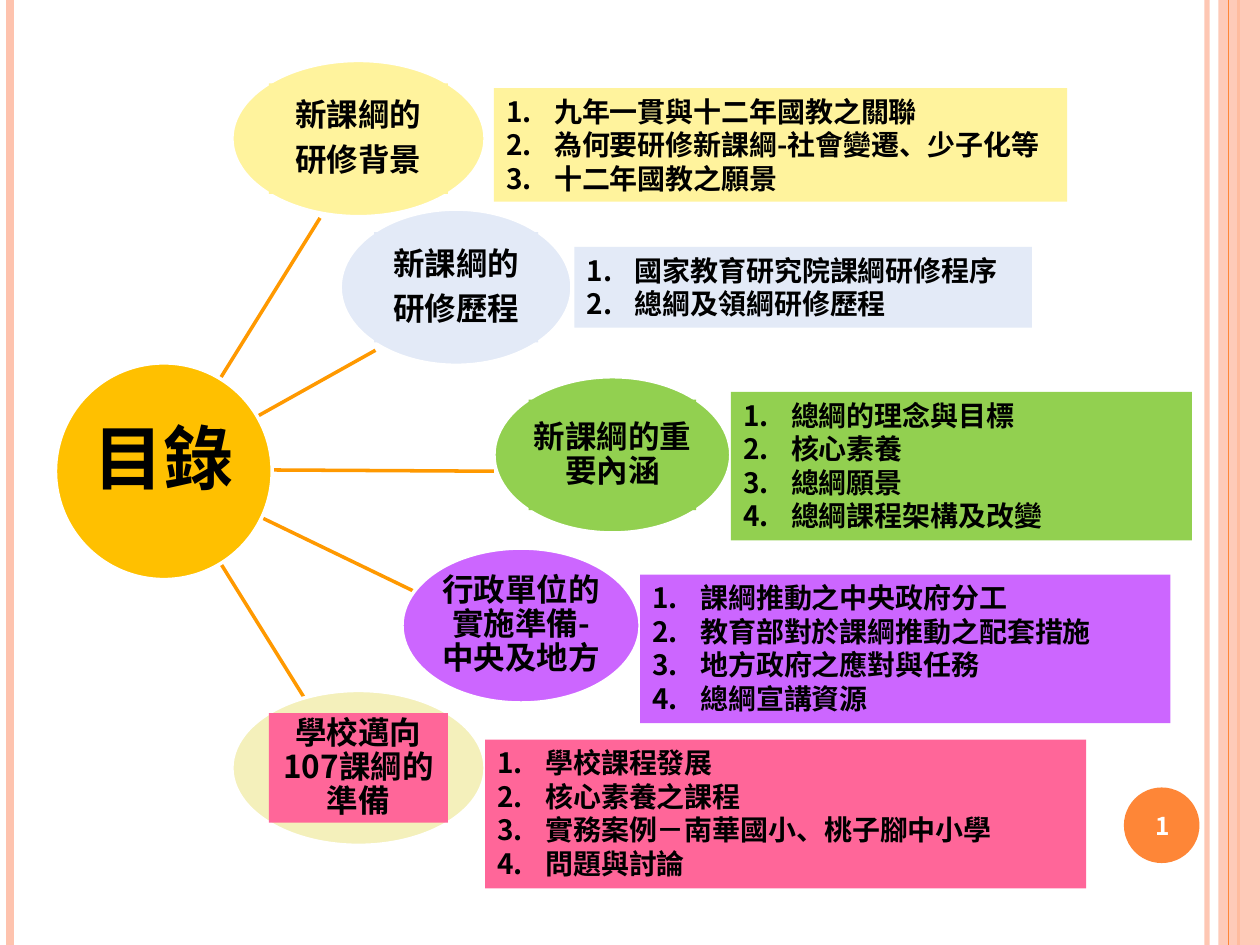
"""Build a table-of-contents slide with five topics branching from a hub."""
from math import sqrt

from lxml.etree import SubElement
from pptx import Presentation
from pptx.dml.color import RGBColor
from pptx.enum.shapes import MSO_CONNECTOR as Connector, MSO_SHAPE as Shape
from pptx.enum.text import MSO_ANCHOR as Anchor, PP_ALIGN as Align
from pptx.oxml.ns import qn
from pptx.util import Inches, Pt

FONT = "Noto Sans CJK SC"
COLORS = {
    "black": "000000", "white": "FFFFFF", "stripe": "FEC3AE", "accent": "FE8637",
    "branch": "FF9900", "hub": "FFC000", "yellow": "FFF39D", "blue": "E3EAF7",
    "green": "92D050", "purple": "CC66FF", "cream": "F4F0BB", "pink": "FF6699",
}
STRIPES = [
    (9.58, "stripe", 3, 93),
    (0.08, "stripe", 4.5, 100),
    (9.83, "accent", 1.5, 100),
]
HUB_BOX = (0.44, 2.88, 1.72, 1.72)
TOPICS = [
    {"title": ["新課綱的", "研修背景"], "oval": (1.84, 0.48, 2.01, 1.24),
     "colors": ("yellow", "yellow", "yellow"), "branch": (1.75, 3, 2.54, 1.73),
     "panel": (3.92, 0.7, 4.55, 0.9),
     "items": ["九年一貫與十二年國教之關聯", "為何要研修新課綱-社會變遷、少子化等",
               "十二年國教之願景"]},
    {"title": ["新課綱的", "研修歷程"], "oval": (2.7, 1.66, 1.84, 1.24),
     "colors": ("blue", "blue", "blue"), "branch": (2.05, 3.3, 2.98, 2.78),
     "panel": (4.56, 1.96, 3.63, 0.64),
     "items": ["國家教育研究院課綱研修程序", "總綱及領綱研修歷程"]},
    {"title": ["新課綱的重要內涵"], "oval": (3.92, 2.99, 1.88, 1.24),
     "colors": ("green", "green", "green"), "branch": (2.17, 3.73, 3.92, 3.74),
     "panel": (5.8, 3.11, 3.66, 1.18),
     "items": ["總綱的理念與目標", "核心素養", "總綱願景", "總綱課程架構及改變"]},
    {"title": ["行政單位的實施準備-中央及地方"], "oval": (3.19, 4.35, 1.89, 1.23),
     "colors": ("purple", None, "purple"), "branch": (2.08, 4.11, 3.28, 4.69),
     "panel": (5.08, 4.56, 4.21, 1.18),
     "items": ["課綱推動之中央政府分工", "教育部對於課綱推動之配套措施",
               "地方政府之應對與任務", "總綱宣講資源"]},
    {"title": ["學校邁向107課綱的準備"], "oval": (1.84, 5.48, 2.01, 1.23),
     "colors": ("cream", "pink", "pink"), "branch": (1.75, 4.47, 2.41, 5.53),
     "panel": (3.85, 5.87, 4.77, 1.18),
     "items": ["學校課程發展", "核心素養之課程", "實務案例－南華國小、桃子腳中小學",
               "問題與討論"]},
]


def rgb(name):
    return RGBColor.from_string(COLORS[name])


def set_opacity(parent, percent):
    color = next(parent.iter(qn("a:srgbClr")))
    SubElement(color, qn("a:alpha")).set("val", str(percent * 1000))


def add_line(slide, ends, color, width, opacity=100):
    line = slide.shapes.add_connector(Connector.STRAIGHT, *map(Inches, ends))
    line.line.color.rgb = rgb(color)
    line.line.width = Pt(width)
    properties = line._element.spPr
    if opacity < 100:
        set_opacity(properties, opacity)
    SubElement(properties, qn("a:effectLst"))


def add_block(slide, kind, box, fill=None, outline=None):
    shape = slide.shapes.add_shape(kind, *map(Inches, box))
    shape.shadow.inherit = False
    if fill:
        shape.fill.solid()
        shape.fill.fore_color.rgb = rgb(fill)
    else:
        shape.fill.background()
    if outline:
        shape.line.color.rgb = rgb(outline)
        shape.line.width = Pt(2)
    else:
        shape.line.fill.background()
    return shape


def write(shape, lines, size, color="black", align=Align.CENTER,
          anchor=Anchor.TOP, numbered=False):
    frame = shape.text_frame
    frame.word_wrap = True
    frame.vertical_anchor = anchor
    frame.text = "\n".join(lines)
    for paragraph in frame.paragraphs:
        paragraph.alignment = align
        if numbered:
            properties = paragraph._p.get_or_add_pPr()
            properties.set("marL", str(Inches(0.38)))
            properties.set("indent", str(-Inches(0.38)))
            SubElement(properties, qn("a:buFont")).set("typeface", FONT)
            SubElement(properties, qn("a:buAutoNum")).set("type", "arabicPeriod")
        for run in paragraph.runs:
            run.font.size = Pt(size)
            run.font.bold = True
            run.font.name = FONT
            run.font.color.rgb = rgb(color)
            east_asian = SubElement(run._r.get_or_add_rPr(), qn("a:ea"))
            east_asian.set("typeface", FONT)
    return frame


def add_text(slide, box, text, size, **style):
    write(slide.shapes.add_textbox(*map(Inches, box)), [text], size, **style)


def inscribed(box):
    left, top, width, height = box
    scale = 1 / sqrt(2)
    inset = (1 - scale) / 2
    return (left + width * inset, top + height * inset, width * scale, height * scale)


def add_background(slide):
    for x, color, width, opacity in STRIPES:
        add_line(slide, (x, 0, x, 7.5), color, width, opacity)
    band = add_block(slide, Shape.RECTANGLE, (9.67, 0, 0.33, 7.5), "stripe")
    set_opacity(band._element.spPr, 87)
    add_line(slide, (9.75, 0, 9.75, 7.5), "accent", 0.75)
    add_block(slide, Shape.OVAL, (8.92, 6.25, 0.6, 0.6), "accent")


def add_topic(slide, topic):
    oval_color, label_color, panel_color = topic["colors"]
    add_block(slide, Shape.OVAL, topic["oval"], oval_color, "white")
    label = add_block(slide, Shape.RECTANGLE, inscribed(topic["oval"]), label_color)
    frame = write(label, topic["title"], 18, anchor=Anchor.MIDDLE)
    frame.margin_left = frame.margin_right = Inches(0.01)
    frame.margin_top = frame.margin_bottom = Inches(0.01)
    for paragraph in frame.paragraphs:
        paragraph.line_spacing = 0.9
        paragraph.space_after = Pt(6.3)
    panel = add_block(slide, Shape.RECTANGLE, topic["panel"], panel_color)
    write(panel, topic["items"], 16, align=Align.LEFT, numbered=True)


def main():
    presentation = Presentation()
    presentation.slide_width = Inches(10)
    presentation.slide_height = Inches(7.5)
    slide = presentation.slides.add_slide(presentation.slide_layouts[6])
    add_background(slide)
    for topic in TOPICS:
        add_line(slide, topic["branch"], "branch", 2)
    add_block(slide, Shape.OVAL, HUB_BOX, "hub", "white")
    for topic in TOPICS:
        add_topic(slide, topic)
    add_text(slide, (0.56, 3.24, 1.47, 0.77), "目錄", 40)
    add_text(slide, (8.89, 6.27, 0.67, 0.57), "1", 14, color="white",
             anchor=Anchor.MIDDLE)
    presentation.save("out.pptx")


if __name__ == "__main__":
    main()
